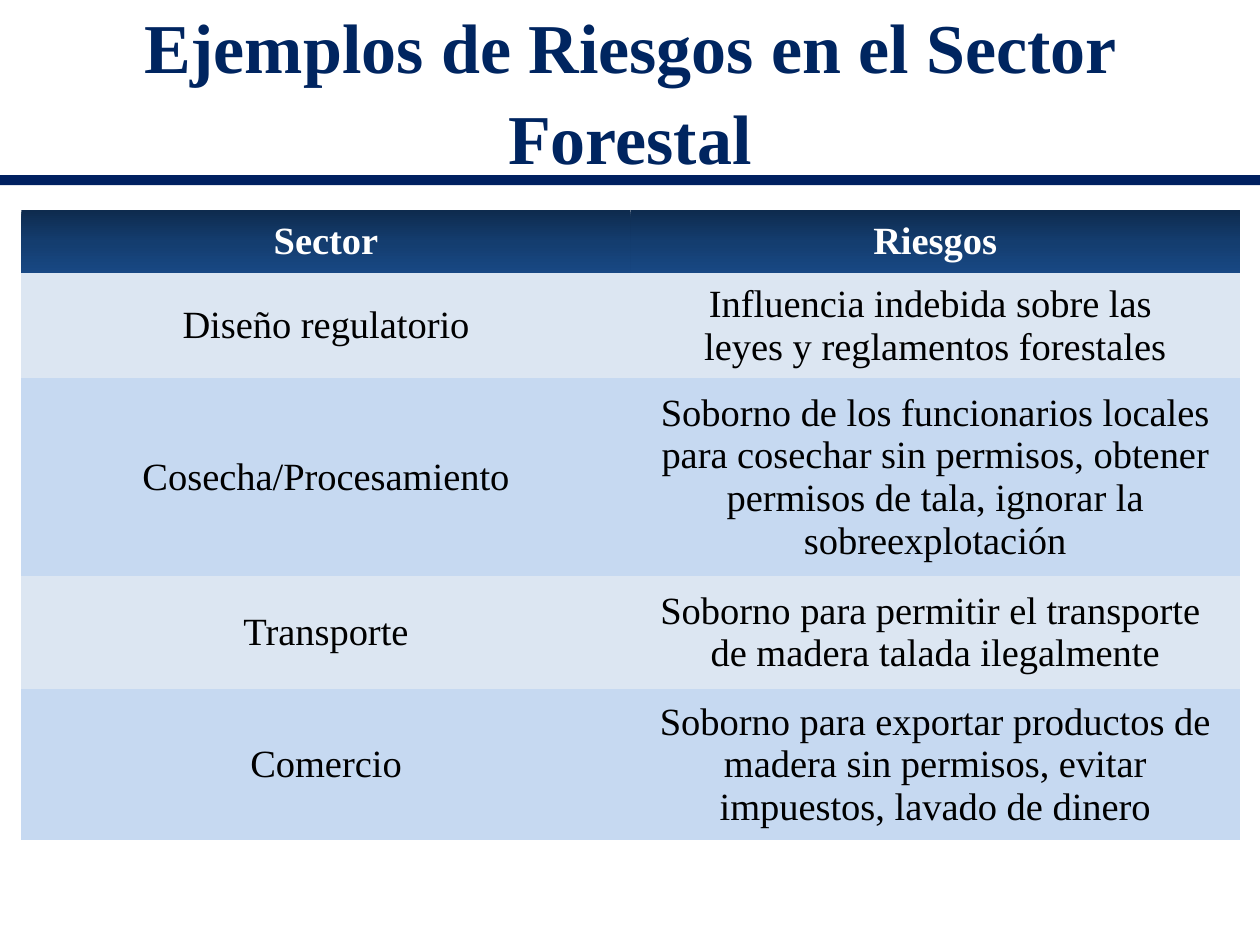
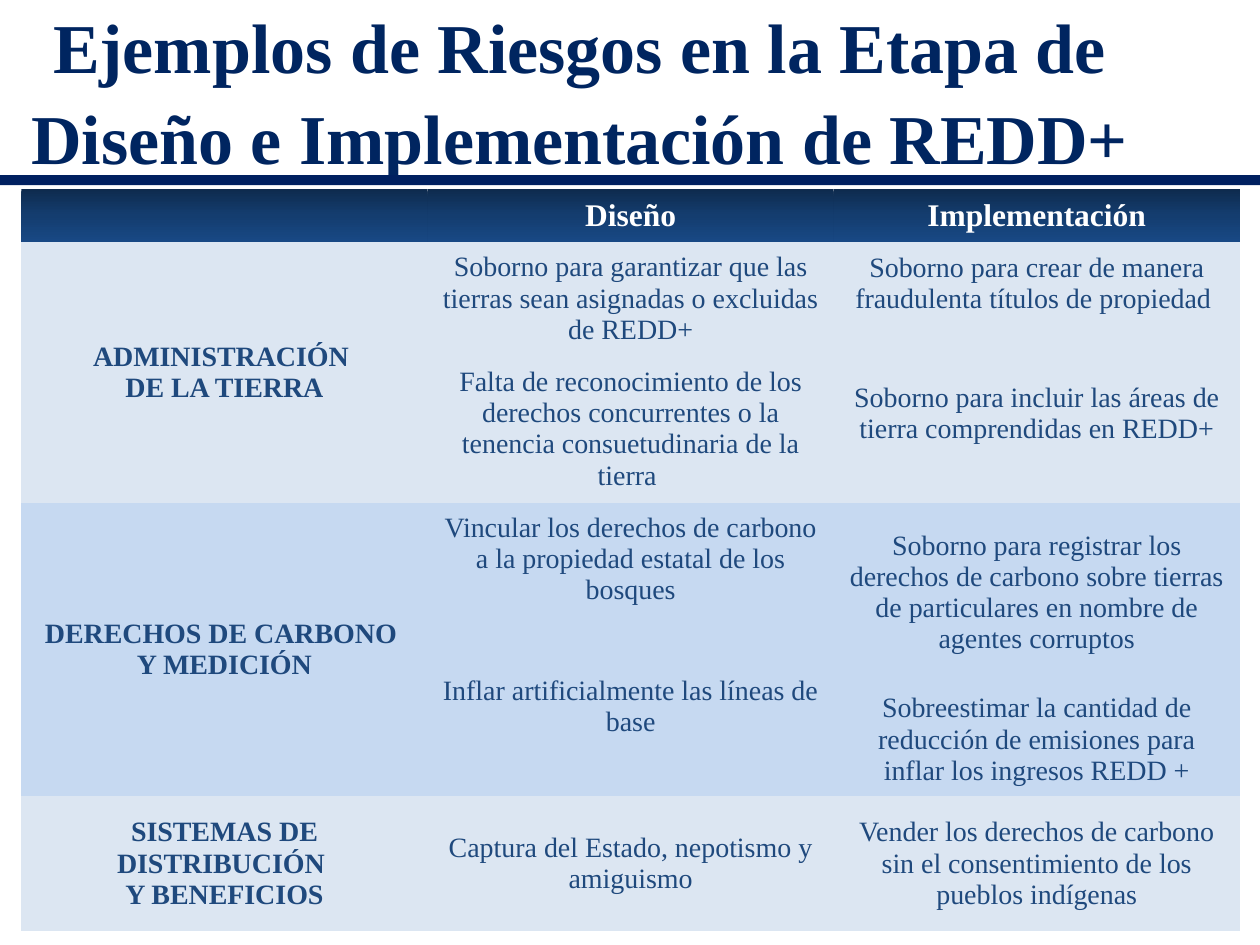
"""Builds two slides with tables of corruption risks in the forest sector and REDD+."""
from pptx import Presentation
from pptx.dml.color import RGBColor
from pptx.enum.shapes import MSO_SHAPE
from pptx.enum.text import MSO_ANCHOR, PP_ALIGN
from pptx.oxml import parse_xml
from pptx.oxml.ns import nsdecls, qn
from pptx.util import Inches, Pt

CENTER = PP_ALIGN.CENTER
MIDDLE = MSO_ANCHOR.MIDDLE
RECTANGLE = MSO_SHAPE.RECTANGLE

FONT = "Times New Roman"
PLAIN_TABLE_STYLE = "{2D5ABB26-0587-4C30-8999-92F81FD0307C}"
COLORS = {
    "title": "002560", "rule": "002060", "header_text": "FFFFFF",
    "black": "000000", "blue": "1F497D", "pale": "DCE6F2", "sky": "C6D9F1",
}
HEADER_GRADIENT = [(0, "0E2B4E"), (50, "143D6F"), (100, "184884")]
TABLE_LEFT, TABLE_WIDTH = 0.17, 9.67

# Each entry is (first row, column, rows spanned, text).
SECTOR_RISKS = [
    (1, 0, 1, "Diseño regulatorio"),
    (1, 1, 1, "Influencia indebida sobre las \nleyes y reglamentos forestales"),
    (2, 0, 1, "Cosecha/Procesamiento"),
    (2, 1, 1, "Soborno de los funcionarios locales para cosechar sin permisos, "
              "obtener permisos de tala, ignorar la sobreexplotación"),
    (3, 0, 1, "Transporte"),
    (3, 1, 1, "Soborno para permitir el transporte \nde madera talada ilegalmente"),
    (4, 0, 1, "Comercio"),
    (4, 1, 1, "Soborno para exportar productos de madera sin permisos, "
              "evitar impuestos, lavado de dinero"),
]
REDD_RISKS = [
    (1, 0, 3, "ADMINISTRACIÓN \nDE LA TIERRA"),
    (1, 1, 2, "Soborno para garantizar que las tierras sean asignadas o excluidas de REDD+"),
    (1, 2, 1, "Soborno para crear de manera fraudulenta títulos de propiedad "),
    (2, 2, 2, "Soborno para incluir las áreas de tierra comprendidas en REDD+"),
    (3, 1, 1, "Falta de reconocimiento de los derechos concurrentes o la "
              "tenencia consuetudinaria de la tierra "),
    (4, 0, 3, "DERECHOS DE CARBONO \nY MEDICIÓN"),
    (4, 1, 1, "Vincular los derechos de carbono a la propiedad estatal de los bosques"),
    (4, 2, 2, "Soborno para registrar los derechos de carbono sobre tierras "
              "de particulares en nombre de agentes corruptos"),
    (5, 1, 2, "Inflar artificialmente las líneas de base"),
    (6, 2, 1, "Sobreestimar la cantidad de reducción de emisiones "
              "para inflar los ingresos REDD +"),
    (7, 0, 1, "SISTEMAS DE DISTRIBUCIÓN \nY BENEFICIOS"),
    (7, 1, 1, "Captura del Estado, nepotismo y amiguismo"),
    (7, 2, 1, "Vender los derechos de carbono sin el consentimiento de los pueblos indígenas"),
]
SLIDES = [
    dict(title="Ejemplos de Riesgos en el Sector Forestal", title_left=0.5,
         table_top=1.67, headers=["Sector", "Riesgos"], risks=SECTOR_RISKS,
         row_heights=[0.5, 0.83, 1.56, 0.9, 1.2], bands=["pale", "sky"] * 2,
         header_size=22, body_size=22, body_color="black", bold_labels=False),
    dict(title="Ejemplos de Riesgos en la Etapa de Diseño e Implementación de REDD+",
         title_left=0.1, table_top=1.5, headers=["", "Diseño", "Implementación"],
         risks=REDD_RISKS,
         row_heights=[0.42, 0.66, 0.24, 1.17, 0.89, 0.53, 0.9, 1.07],
         bands=["pale"] * 3 + ["sky"] * 3 + ["pale"],
         header_size=18, body_size=16, body_color="blue", bold_labels=True),
]


def rgb(name):
    return RGBColor.from_string(COLORS[name])


def write_text(frame, text, size, color, bold=False, spacing=None):
    for number, line in enumerate(text.split("\n")):
        paragraph = frame.paragraphs[0] if number == 0 else frame.add_paragraph()
        paragraph.alignment = CENTER
        paragraph.line_spacing = spacing
        run = paragraph.add_run()
        run.text = line
        run.font.name = FONT
        run.font.size = Pt(size)
        run.font.bold = bold
        run.font.color.rgb = rgb(color)


def fill_header(cell):
    stops = "".join(f'<a:gs pos="{at * 1000}"><a:srgbClr val="{color}"/></a:gs>'
                    for at, color in HEADER_GRADIENT)
    cell._tc.get_or_add_tcPr().append(parse_xml(
        f'<a:gradFill {nsdecls("a")} rotWithShape="1"><a:gsLst>{stops}</a:gsLst>'
        '<a:lin ang="5400000" scaled="0"/></a:gradFill>'))


def add_title(slide, title, left):
    heading = slide.shapes.add_textbox(Inches(left), Inches(0.19), Inches(9), Inches(1.01))
    heading.text_frame.word_wrap = True
    heading.text_frame.vertical_anchor = MIDDLE
    write_text(heading.text_frame, title, size=40, color="title", bold=True, spacing=1.08)
    rule = slide.shapes.add_shape(RECTANGLE, 0, Inches(1.39), Inches(10), Inches(0.08))
    rule.shadow.inherit = False
    rule.fill.solid()
    rule.fill.fore_color.rgb = rgb("rule")
    rule.line.fill.background()


def add_risk_table(slide, content):
    headers, heights = content["headers"], content["row_heights"]
    table = slide.shapes.add_table(
        len(heights), len(headers), Inches(TABLE_LEFT), Inches(content["table_top"]),
        Inches(TABLE_WIDTH), Inches(sum(heights))).table
    table._tbl.tblPr.find(qn("a:tableStyleId")).text = PLAIN_TABLE_STYLE
    table.horz_banding = False
    for row, height in zip(table.rows, heights):
        row.height = Inches(height)
    for col, header in enumerate(headers):
        cell = table.cell(0, col)
        cell.vertical_anchor = MIDDLE
        fill_header(cell)
        if header:
            write_text(cell.text_frame, header, size=content["header_size"],
                       color="header_text", bold=True)
    for row, band in enumerate(content["bands"], start=1):
        for col in range(len(headers)):
            cell = table.cell(row, col)
            cell.fill.solid()
            cell.fill.fore_color.rgb = rgb(band)
    for row, col, span, text in content["risks"]:
        cell = table.cell(row, col)
        if span > 1:
            cell.merge(table.cell(row + span - 1, col))
        cell.vertical_anchor = MIDDLE
        write_text(cell.text_frame, text, size=content["body_size"],
                   color=content["body_color"], bold=content["bold_labels"] and col == 0)


def main():
    deck = Presentation()
    deck.slide_width, deck.slide_height = Inches(10), Inches(7.5)
    for content in SLIDES:
        slide = deck.slides.add_slide(deck.slide_layouts[6])
        add_title(slide, content["title"], content["title_left"])
        add_risk_table(slide, content)
    deck.save("out.pptx")


if __name__ == "__main__":
    main()
